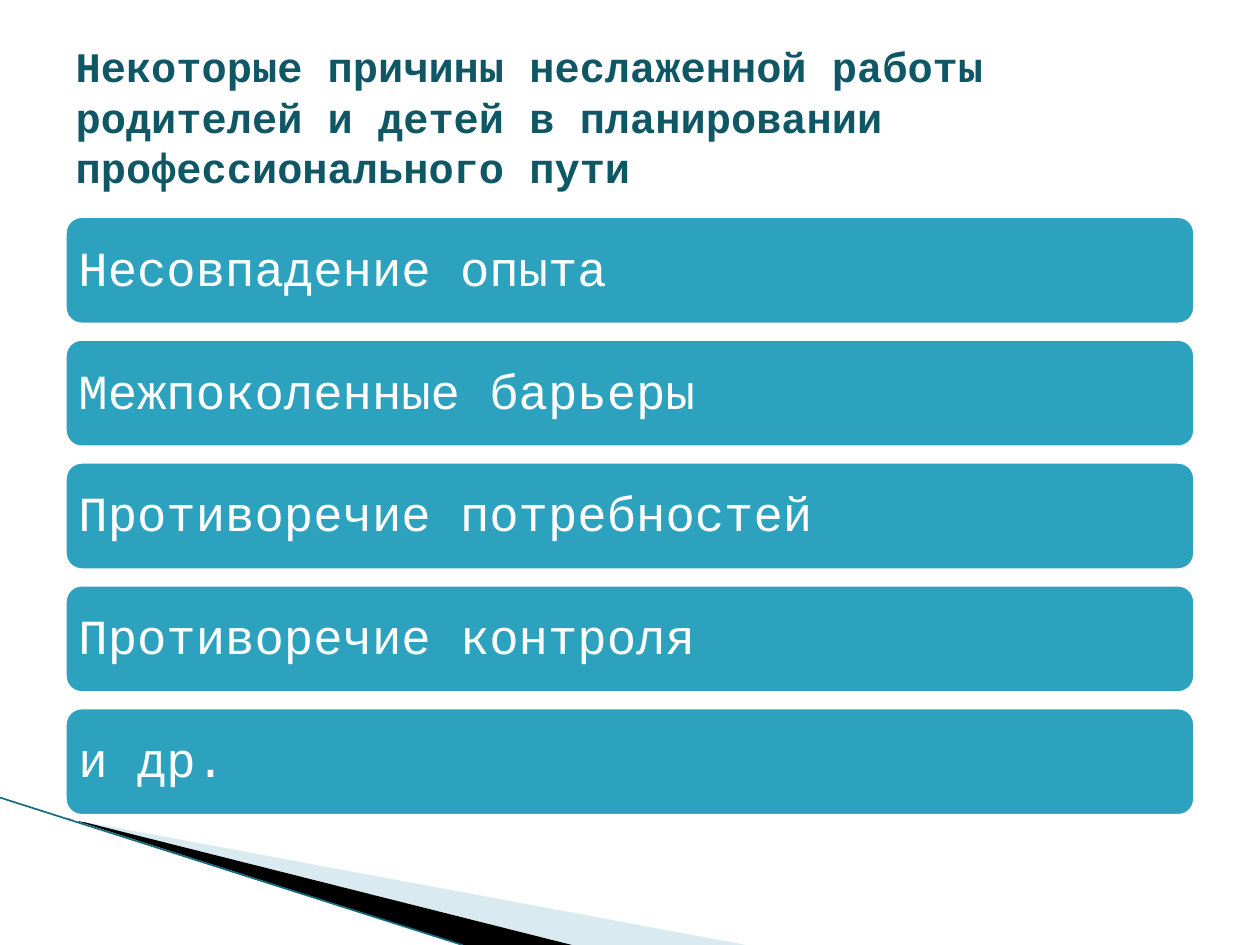
from dataclasses import dataclass

from lxml.etree import SubElement
from pptx import Presentation
from pptx.dml.color import RGBColor
from pptx.enum.shapes import MSO_CONNECTOR, MSO_SHAPE
from pptx.enum.text import MSO_ANCHOR, MSO_AUTO_SIZE, PP_ALIGN
from pptx.oxml.ns import qn
from pptx.util import Inches, Pt


@dataclass(frozen=True)
class Theme:
    font: str = "Courier New"
    title: RGBColor = RGBColor(0x10, 0x57, 0x66)
    bar: RGBColor = RGBColor(0x2D, 0xA2, 0xBF)
    white: RGBColor = RGBColor(0xFF, 0xFF, 0xFF)
    black: RGBColor = RGBColor(0, 0, 0)
    pale: RGBColor = RGBColor(0xA0, 0xCB, 0xDC)
    edge: RGBColor = RGBColor(0x17, 0x6B, 0x80)
    title_size: int = 24
    bar_size: int = 28


@dataclass(frozen=True)
class Wedge:
    points: tuple[tuple[float, float], ...]
    color: RGBColor
    opacity: int = 100


THEME = Theme()
LEFT, WIDTH = 0.5, 9
BAR_TOP, BAR_HEIGHT, BAR_STEP = 1.7, 0.89, 0.975
TITLE = ("Некоторые причины неслаженной работы родителей и детей "
         "в планировании профессионального пути")
REASONS = ("Несовпадение опыта", "Межпоколенные барьеры",
           "Противоречие потребностей", "Противоречие контроля", "и др.")
WEDGES = (
    Wedge(((0.55, 6.5), (5.92, 7.5), (4.55, 7.5)), THEME.pale, 40),
    Wedge(((0.53, 6.49), (4.54, 7.5), (3.68, 7.5)), THEME.black),
)


def format_text(tf, size: int, color: RGBColor, bold: bool = False) -> None:
    tf.word_wrap = True
    tf.auto_size = MSO_AUTO_SIZE.NONE
    tf.vertical_anchor = MSO_ANCHOR.MIDDLE
    p = tf.paragraphs[0]
    p.alignment = PP_ALIGN.LEFT
    for r in p.runs:
        r.font.name = THEME.font
        r.font.size = Pt(size)
        r.font.bold = bold
        r.font.color.rgb = color


def add_wedge(s, wedge: Wedge) -> None:
    start, *rest = [(Inches(x), Inches(y)) for x, y in wedge.points]
    builder = s.shapes.build_freeform(*start)
    builder.add_line_segments(rest)
    sp = builder.convert_to_shape()
    sp.shadow.inherit = False
    sp.fill.solid()
    sp.fill.fore_color.rgb = wedge.color
    sp.line.fill.background()
    if wedge.opacity < 100:
        color = sp.fill._xPr.find(qn("a:solidFill"))[0]
        SubElement(color, qn("a:alpha"), val=str(wedge.opacity * 1000))


def add_edge(s) -> None:
    line = s.shapes.add_connector(MSO_CONNECTOR.STRAIGHT, Inches(0), Inches(6.33),
                                  Inches(3.67), Inches(7.5))
    line.line.color.rgb = THEME.edge
    line.line.width = Pt(0.95)
    SubElement(line._element.spPr, qn("a:effectLst"))


def add_bar(s, text: str, top: float) -> None:
    sp = s.shapes.add_shape(MSO_SHAPE.ROUNDED_RECTANGLE, Inches(LEFT), Inches(top),
                            Inches(WIDTH), Inches(BAR_HEIGHT))
    sp.shadow.inherit = False
    sp.fill.solid()
    sp.fill.fore_color.rgb = THEME.bar
    sp.line.color.rgb = THEME.white
    sp.line.width = Pt(4.33)
    tf = sp.text_frame
    tf.text = text
    # The rounded corners add 0.04 inch to each margin
    tf.margin_left = tf.margin_right = tf.margin_top = tf.margin_bottom = Inches(0.08)
    tf.paragraphs[0].line_spacing = 0.9
    format_text(tf, THEME.bar_size, THEME.white)


def main() -> None:
    prs = Presentation()
    prs.slide_width, prs.slide_height = Inches(10), Inches(7.5)
    s = prs.slides.add_slide(prs.slide_layouts[5])

    # Corner decoration
    for wedge in WEDGES:
        add_wedge(s, wedge)
    add_edge(s)

    # Title
    title = s.shapes.title
    title.left, title.top = Inches(LEFT), Inches(0.3)
    title.width, title.height = Inches(WIDTH), Inches(1.25)
    title.text_frame.text = TITLE
    format_text(title.text_frame, THEME.title_size, THEME.title, bold=True)

    # Stack of reasons
    for i, reason in enumerate(REASONS):
        add_bar(s, reason, BAR_TOP + i * BAR_STEP)

    prs.save("out.pptx")


if __name__ == "__main__":
    main()
